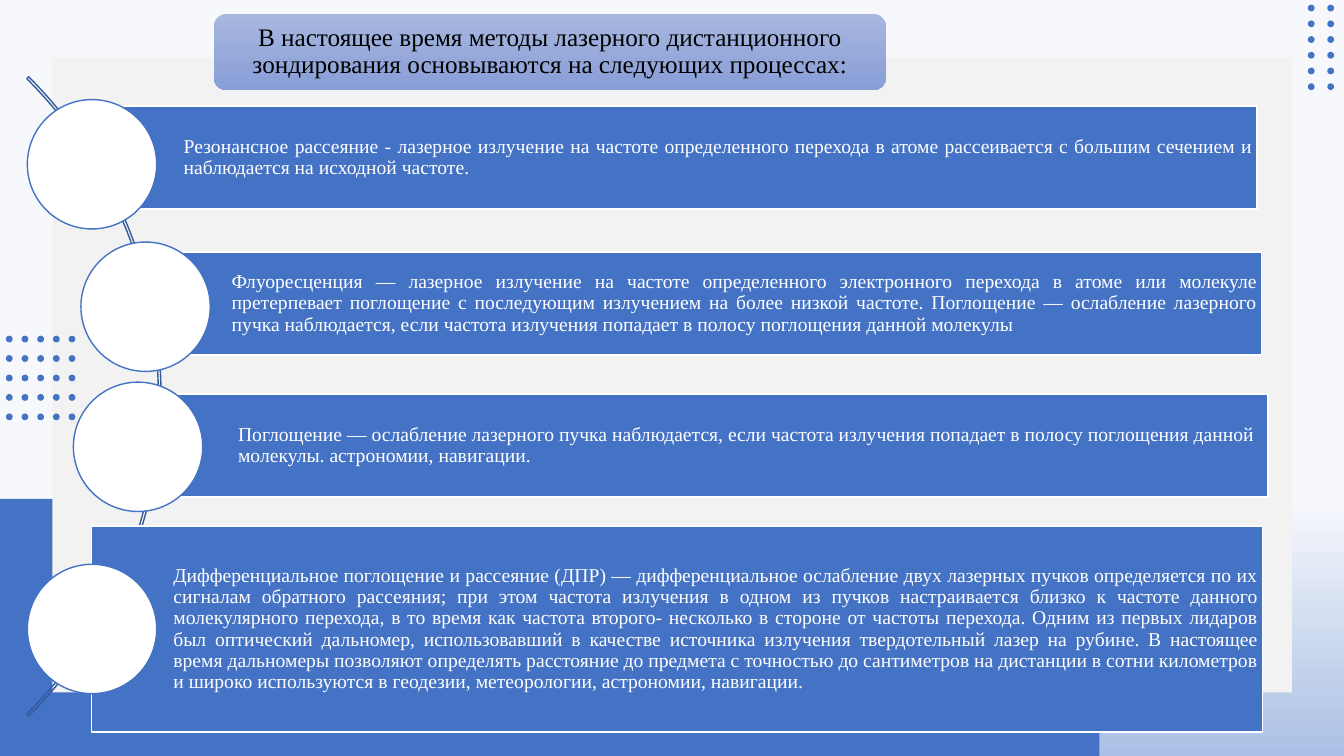
import pptx
import pptx.dml.color
import pptx.enum.shapes
import pptx.enum.text
import pptx.util

Cm = pptx.util.Cm
Pt = pptx.util.Pt
RGBColor = pptx.dml.color.RGBColor
ShapeType = pptx.enum.shapes.MSO_SHAPE
Align = pptx.enum.text.PP_ALIGN

BLUE = RGBColor(0x44, 0x72, 0xC4)
ARC_BLUE = RGBColor(0x36, 0x5B, 0x9D)
PANEL_GREY = RGBColor(0xF2, 0xF2, 0xF2)
WHITE = RGBColor(0xFF, 0xFF, 0xFF)
BLACK = RGBColor(0, 0, 0)
BACKGROUND_STOPS = ((0.66, RGBColor(0xF6, 0xF8, 0xFC)), (1, RGBColor(0xAB, 0xC0, 0xE4)))
TITLE_STOPS = ((0, RGBColor(0xA8, 0xB7, 0xDF)), (1, RGBColor(0x88, 0x9E, 0xD7)))
FONT = "Times New Roman"
CIRCLE_SIZE = 3.26

TITLE = ("В настоящее время методы лазерного дистанционного зондирования "
         "основываются на следующих процессах:")
PROCESSES = (
    ((2.57, 2.67, 29.11, 2.6), (0.69, 2.51), Align.JUSTIFY,
     "Резонансное рассеяние - лазерное излучение на частоте определенного перехода "
     "в атоме рассеивается с большим сечением и наблюдается на исходной частоте."),
    ((3.78, 6.35, 28.02, 2.6), (2.04, 6.1), Align.JUSTIFY,
     "Флуоресценция — лазерное излучение на частоте определенного электронного "
     "перехода в атоме или молекуле претерпевает поглощение с последующим излучением "
     "на более низкой частоте. Поглощение — ослабление лазерного пучка наблюдается, "
     "если частота излучения попадает в полосу поглощения данной молекулы"),
    ((3.94, 9.93, 28.02, 2.6), (1.85, 9.63), Align.LEFT,
     "Поглощение — ослабление лазерного пучка наблюдается, если частота излучения "
     "попадает в полосу поглощения данной молекулы. астрономии, навигации."),
    ((2.31, 13.26, 29.51, 5.19), (0.69, 14.22), Align.JUSTIFY,
     "Дифференциальное поглощение и рассеяние (ДПР) — дифференциальное ослабление "
     "двух лазерных пучков определяется по их сигналам обратного рассеяния; при этом "
     "частота излучения в одном из пучков настраивается близко к частоте данного "
     "молекулярного перехода, в то время как частота второго- несколько в стороне от "
     "частоты перехода. Одним из первых лидаров был оптический дальномер, "
     "использовавший в качестве источника излучения твердотельный лазер на рубине. "
     "В настоящее время дальномеры позволяют определять расстояние до предмета с "
     "точностью до сантиметров на дистанции в сотни километров и широко используются "
     "в геодезии, метеорологии, астрономии, навигации."),
)


def add_block(slide, kind, box, fill=None, line=None):
    """Add a flat preset shape in a box given in centimetres."""
    shape = slide.shapes.add_shape(kind, *map(Cm, box))
    shape.shadow.inherit = False
    if fill is None:
        shape.fill.background()
    else:
        shape.fill.solid()
        shape.fill.fore_color.rgb = fill
    if line is None:
        shape.line.fill.background()
    else:
        shape.line.color.rgb = line
        shape.line.width = Pt(1)
    return shape


def set_gradient(fill, stops):
    """Fill from top to bottom with two colour stops."""
    fill.gradient()
    fill.gradient_angle = 270
    for stop, (position, color) in zip(fill.gradient_stops, stops):
        stop.position = position
        stop.color.rgb = color


def write_text(shape, text, size, color, alignment, margins):
    """Write one vertically centred paragraph into a shape."""
    frame = shape.text_frame
    frame.word_wrap = True
    frame.auto_size = pptx.enum.text.MSO_AUTO_SIZE.NONE
    frame.vertical_anchor = pptx.enum.text.MSO_ANCHOR.MIDDLE
    (frame.margin_left, frame.margin_top,
     frame.margin_right, frame.margin_bottom) = map(Cm, margins)
    paragraph = frame.paragraphs[0]
    paragraph.alignment = alignment
    paragraph.line_spacing = 0.9
    run = paragraph.add_run()
    run.text = text
    run.font.name = FONT
    run.font.size = Pt(size)
    run.font.color.rgb = color


def add_dots(slide, box, columns, rows):
    """Spread a grid of small dots evenly over a box."""
    left, top, width, height = box
    dot = 0.17
    for row in range(rows):
        for column in range(columns):
            x = left + column * (width - dot) / (columns - 1)
            y = top + row * (height - dot) / (rows - 1)
            add_block(slide, ShapeType.OVAL, (x, y, dot, dot), BLUE)


def add_backdrop(slide, width, height):
    """Paint the background, corner block, panel and dot grids."""
    set_gradient(slide.background.fill, BACKGROUND_STOPS)
    add_block(slide, ShapeType.RECTANGLE, (0, height - 6.48, 27.71, 6.48), BLUE)
    add_block(slide, ShapeType.RECTANGLE, (1.32, 1.45, width - 2.63, 16), PANEL_GREY)
    add_dots(slide, (width - 0.91, 0.12, 0.66, 2.15), 2, 6)
    add_dots(slide, (0.15, 8.46, 1.75, 2.13), 5, 5)


def add_process_list(slide, box):
    """Add the arc in its box and the bars with circles along it."""
    arc = add_block(slide, ShapeType.BLOCK_ARC, box, line=ARC_BLUE)
    for index, value in enumerate((189, 27, 0.003)):
        arc.adjustments[index] = value
    for bar_box, circle_corner, alignment, text in PROCESSES:
        bar = add_block(slide, ShapeType.RECTANGLE, bar_box, BLUE, WHITE)
        write_text(bar, text, 14, WHITE, alignment, (2.06, 0.1, 0.1, 0.1))
        circle_box = (*circle_corner, CIRCLE_SIZE, CIRCLE_SIZE)
        add_block(slide, ShapeType.OVAL, circle_box, WHITE, BLUE)


def add_title(slide, box):
    """Place the title over a rounded gradient plate."""
    plate = add_block(slide, ShapeType.ROUNDED_RECTANGLE, box)
    set_gradient(plate.fill, TITLE_STOPS)
    left, top, width, height = box
    inset = 0.09
    title = slide.shapes.title
    title.left, title.top = Cm(left + inset), Cm(top + inset)
    title.width, title.height = Cm(width - 2 * inset), Cm(height - 2 * inset)
    write_text(title, TITLE, 18, BLACK, Align.CENTER, (0.18,) * 4)
    plate.element.addnext(title.element)


def main():
    """Build and save the presentation."""
    presentation = pptx.Presentation()
    width, height = 33.87, 19.05
    presentation.slide_width, presentation.slide_height = Cm(width), Cm(height)
    slide = presentation.slides.add_slide(presentation.slide_layouts[5])
    add_backdrop(slide, width, height)
    add_process_list(slide, (-18.72, -1.4, 22.78, 22.78))
    add_title(slide, (5.39, 0.35, 16.94, 1.92))
    presentation.save("out.pptx")


if __name__ == "__main__":
    main()
